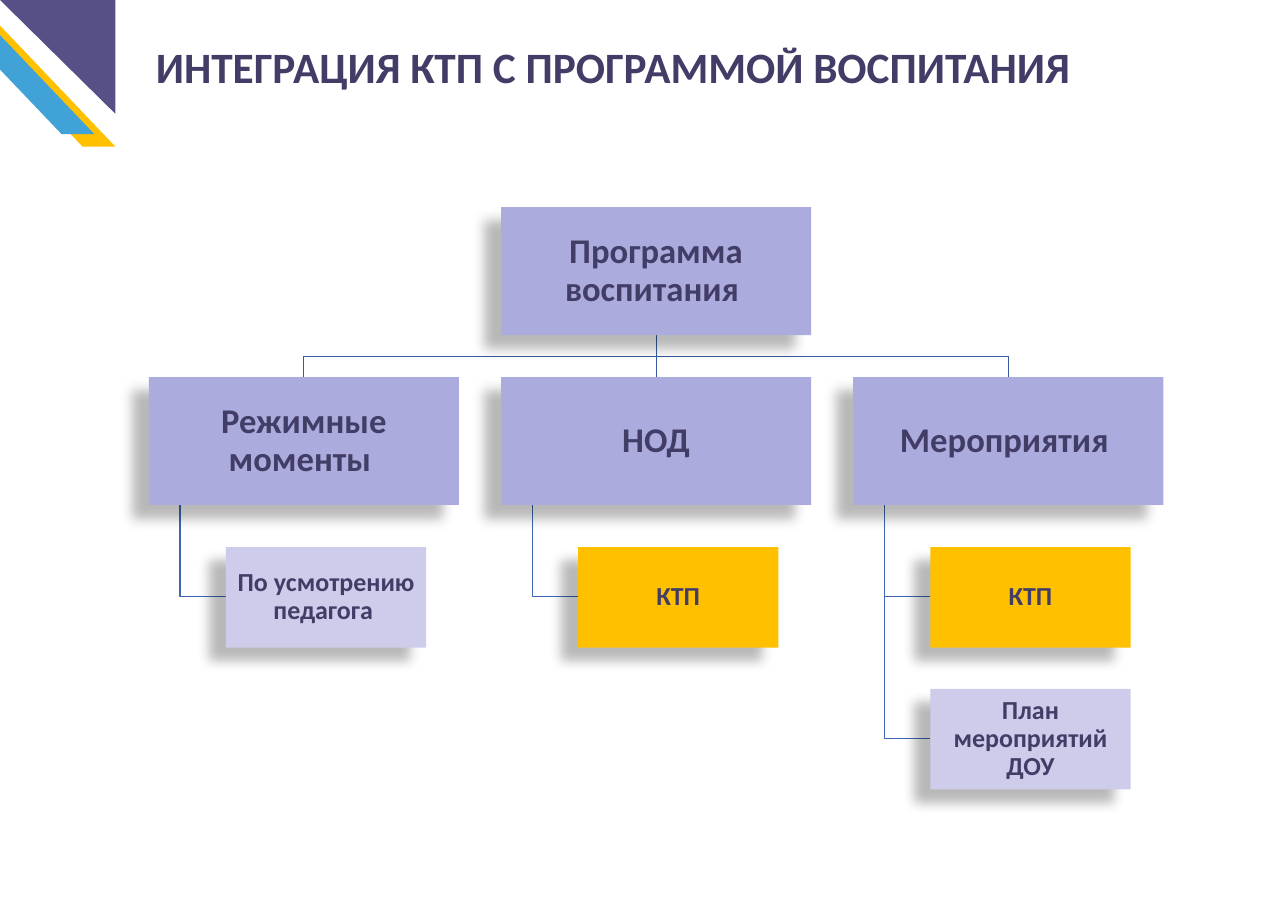
from dataclasses import dataclass

import pptx
import pptx.dml.color
import pptx.enum.shapes
import pptx.enum.text
import pptx.oxml
import pptx.oxml.ns
import pptx.util

EMU_PER_PX = 9144  # 100 px to the inch
SHAPES = pptx.enum.shapes.MSO_SHAPE
ALIGN = pptx.enum.text.PP_ALIGN
ANCHOR = pptx.enum.text.MSO_ANCHOR


@dataclass(frozen=True)
class Theme:
    font: str = "Calibri"
    ink: str = "423D67"
    violet: str = "565087"
    blue: str = "41A2D8"
    amber: str = "FFC000"
    lilac: str = "ABABDD"
    pale: str = "CDCDEB"
    trunk_line: str = "365B9D"
    leaf_line: str = "3E67B2"
    title_size: int = 40
    branch_size: int = 32
    leaf_size: int = 24


@dataclass(frozen=True)
class Stripe:
    kind: int
    left: int
    top: int
    width: int
    height: int
    color: str
    flips: tuple[str, ...]


@dataclass(frozen=True)
class Leaf:
    text: str
    color: str


@dataclass(frozen=True)
class Branch:
    text: str
    leaves: tuple[Leaf, ...]


THEME = Theme()
STRIPES = (
    Stripe(SHAPES.PARALLELOGRAM, -79, -6, 227, 194, THEME.amber, ("flipH",)),
    Stripe(SHAPES.PARALLELOGRAM, -106, -22, 227, 194, THEME.blue, ("flipH",)),
    Stripe(SHAPES.RIGHT_TRIANGLE, 0, 0, 148, 146, THEME.violet, ("flipH", "flipV")),
)
PLAN = Leaf("КТП", THEME.amber)
BRANCHES = (
    Branch("Режимные моменты ", (Leaf("По усмотрению педагога ", THEME.pale),)),
    Branch("НОД", (PLAN,)),
    Branch("Мероприятия ", (PLAN, Leaf("План мероприятий ДОУ", THEME.pale))),
)

BRANCH_WIDTH, BRANCH_HEIGHT = 398, 164
LEAF_WIDTH, LEAF_HEIGHT = 257, 129
FIRST_LEFT, COLUMN_STEP = 191, 452
ROOT_TOP, BRANCH_TOP, LEAF_TOP = 266, 484, 702
LEAF_STEP, LEAF_INDENT, STEM_INDENT = 182, 99, 40
ROOT_LEFT = FIRST_LEFT + COLUMN_STEP


def px(length: int) -> pptx.util.Emu:
    return pptx.util.Emu(length * EMU_PER_PX)


def rgb(color: str) -> pptx.dml.color.RGBColor:
    return pptx.dml.color.RGBColor.from_string(color)


def style_paragraph(para, size: int, alignment) -> None:
    para.alignment = alignment
    para.line_spacing = 0.9
    para.font.name = THEME.font
    para.font.size = pptx.util.Pt(size)
    para.font.bold = True
    para.font.color.rgb = rgb(THEME.ink)


def add_stripe(page, stripe: Stripe) -> None:
    shape = page.shapes.add_shape(
        stripe.kind, px(stripe.left), px(stripe.top), px(stripe.width), px(stripe.height))
    shape.shadow.inherit = False
    shape.fill.solid()
    shape.fill.fore_color.rgb = rgb(stripe.color)
    shape.line.fill.background()
    if stripe.kind == SHAPES.PARALLELOGRAM:
        shape.adjustments[0] = 0.953
    for flip in stripe.flips:
        shape.element.spPr.get_or_add_xfrm().set(flip, "1")


def add_shadow(shape) -> None:
    """Cast a soft shadow towards the lower left."""
    shape.shadow.inherit = False
    effects = shape.element.spPr.find(pptx.oxml.ns.qn("a:effectLst"))
    effects.append(pptx.oxml.parse_xml(
        f'<a:outerShdw {pptx.oxml.ns.nsdecls("a")} blurRad="149860" dist="250190" '
        'dir="8460000" algn="ctr" rotWithShape="0"><a:srgbClr val="000000">'
        '<a:alpha val="28000"/></a:srgbClr></a:outerShdw>'))


def add_box(page, left: int, top: int, width: int, height: int,
            text: str, color: str, size: int):
    box = page.shapes.add_shape(SHAPES.RECTANGLE, px(left), px(top), px(width), px(height))
    add_shadow(box)
    box.fill.solid()
    box.fill.fore_color.rgb = rgb(color)
    box.line.fill.background()
    frame = box.text_frame
    frame.word_wrap = True
    frame.vertical_anchor = ANCHOR.MIDDLE
    frame.margin_left = frame.margin_right = frame.margin_top = frame.margin_bottom = px(2)
    frame.text = text
    style_paragraph(frame.paragraphs[0], size, ALIGN.CENTER)
    return box


def add_branch_box(page, left: int, top: int, text: str):
    return add_box(page, left, top, BRANCH_WIDTH, BRANCH_HEIGHT,
                   text, THEME.lilac, THEME.branch_size)


def add_bent_line(page, points: list[tuple[int, int]], color: str) -> None:
    builder = page.shapes.build_freeform(*points[0], scale=EMU_PER_PX)
    builder.add_line_segments(points[1:], close=False)
    line = builder.convert_to_shape()
    line.shadow.inherit = False
    line.fill.background()
    line.line.color.rgb = rgb(color)
    line.line.width = pptx.util.Pt(1)


def add_trunk(page):
    """Draw the lines from the root to the branches; return the straight one."""
    center = ROOT_LEFT + BRANCH_WIDTH // 2
    bottom = ROOT_TOP + BRANCH_HEIGHT
    middle = (bottom + BRANCH_TOP) // 2
    for end in (center - COLUMN_STEP, center + COLUMN_STEP):
        add_bent_line(page, [(center, bottom), (center, middle), (end, middle),
                             (end, BRANCH_TOP)], THEME.trunk_line)
    line = page.shapes.add_connector(
        pptx.enum.shapes.MSO_CONNECTOR.STRAIGHT,
        px(center), px(bottom), px(center), px(BRANCH_TOP))
    line.line.color.rgb = rgb(THEME.trunk_line)
    line.line.width = pptx.util.Pt(1)
    line.element.spPr.append(pptx.oxml.parse_xml(
        f'<a:effectLst {pptx.oxml.ns.nsdecls("a")}/>'))
    return line


def add_stems(page, left: int, branch: Branch) -> None:
    stem = left + STEM_INDENT
    for row in range(len(branch.leaves)):
        middle = LEAF_TOP + row * LEAF_STEP + LEAF_HEIGHT // 2
        add_bent_line(page, [(stem, BRANCH_TOP + BRANCH_HEIGHT), (stem, middle),
                             (left + LEAF_INDENT, middle)], THEME.leaf_line)


def add_title(page, text: str) -> None:
    title = page.shapes.title
    title.left, title.top, title.width, title.height = px(190), px(47), px(1256), px(77)
    frame = title.text_frame
    frame.text = text
    frame.word_wrap = True
    frame.auto_size = pptx.enum.text.MSO_AUTO_SIZE.NONE
    frame.vertical_anchor = ANCHOR.TOP
    style_paragraph(frame.paragraphs[0], THEME.title_size, ALIGN.LEFT)
    frame.paragraphs[0].line_spacing = 1.0


def main() -> None:
    deck = pptx.Presentation()
    deck.slide_width, deck.slide_height = px(1653), px(1169)
    page = deck.slides.add_slide(deck.slide_layouts.get_by_name("Title Only"))

    for stripe in STRIPES:
        add_stripe(page, stripe)
    add_title(page, "ИНТЕГРАЦИЯ КТП С ПРОГРАММОЙ ВОСПИТАНИЯ")

    columns = [(FIRST_LEFT + index * COLUMN_STEP, branch)
               for index, branch in enumerate(BRANCHES)]
    for left, branch in columns:
        add_stems(page, left, branch)
    trunk = add_trunk(page)

    root = add_branch_box(page, ROOT_LEFT, ROOT_TOP, "Программа воспитания ")
    trunk.begin_connect(root, 2)
    for left, branch in columns:
        box = add_branch_box(page, left, BRANCH_TOP, branch.text)
        if left == ROOT_LEFT:
            trunk.end_connect(box, 0)
        for row, leaf in enumerate(branch.leaves):
            add_box(page, left + LEAF_INDENT, LEAF_TOP + row * LEAF_STEP,
                    LEAF_WIDTH, LEAF_HEIGHT, leaf.text, leaf.color, THEME.leaf_size)

    deck.save("out.pptx")


if __name__ == "__main__":
    main()
